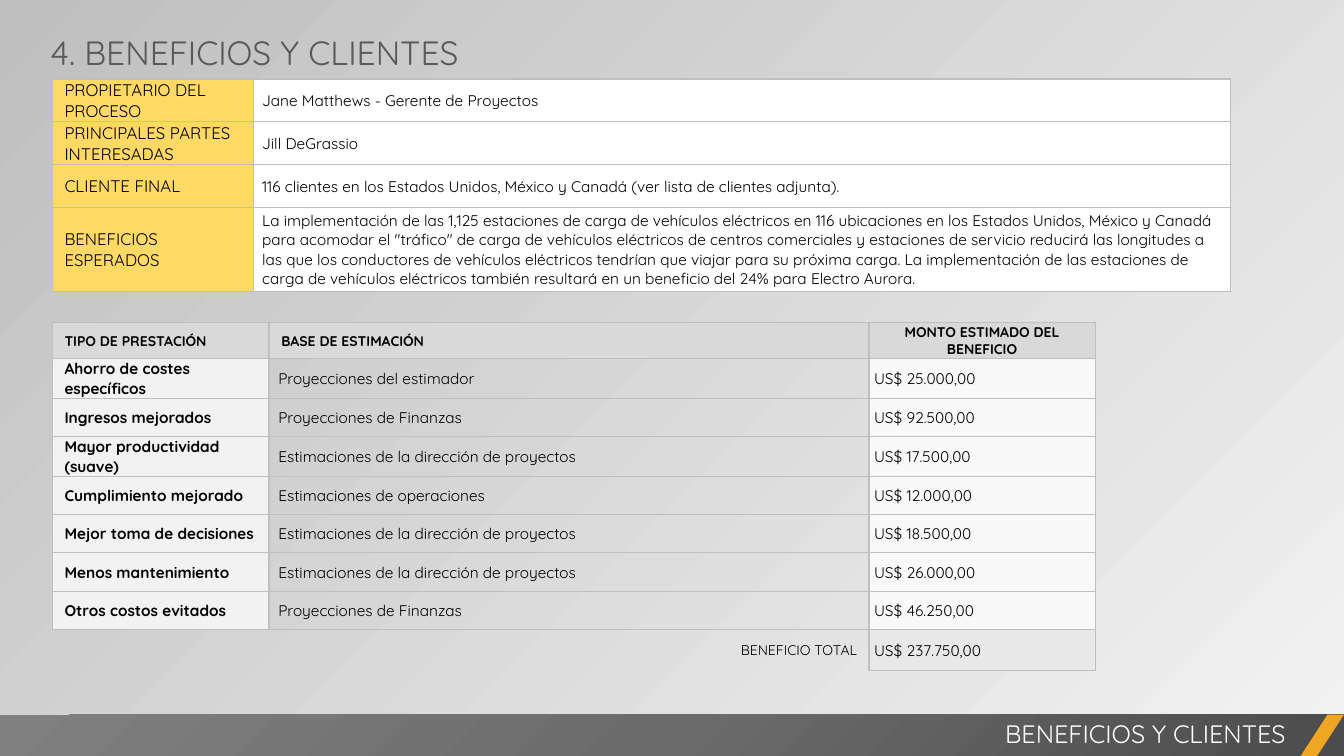
from lxml import etree
from pptx import Presentation
from pptx.dml.color import RGBColor
from pptx.enum.shapes import MSO_SHAPE as Shape
from pptx.enum.text import MSO_ANCHOR as Anchor, MSO_AUTO_SIZE as Fit, PP_ALIGN as Align
from pptx.oxml import parse_xml
from pptx.oxml.ns import nsdecls, qn
from pptx.util import Inches, Pt

TITLE = "4. BENEFICIOS Y CLIENTES"
FOOTER = "BENEFICIOS Y CLIENTES"
FACTS = [
    ("PROPIETARIO DEL PROCESO", "Jane Matthews - Gerente de Proyectos"),
    ("PRINCIPALES PARTES INTERESADAS", "Jill DeGrassio"),
    ("CLIENTE FINAL", "116 clientes en los Estados Unidos, México y Canadá "
     "(ver lista de clientes adjunta)."),
    ("BENEFICIOS ESPERADOS", "La implementación de las 1,125 estaciones de carga de "
     "vehículos eléctricos en 116 ubicaciones en los Estados Unidos, México y Canadá para "
     "acomodar el \"tráfico\" de carga de vehículos eléctricos de centros comerciales y "
     "estaciones de servicio reducirá las longitudes a las que los conductores de vehículos "
     "eléctricos tendrían que viajar para su próxima carga. La implementación de las "
     "estaciones de carga de vehículos eléctricos también resultará en un beneficio del "
     "24% para Electro Aurora."),
]
HEADS = ("TIPO DE PRESTACIÓN", "BASE DE ESTIMACIÓN", "MONTO ESTIMADO DEL BENEFICIO")
GAINS = [
    ("Ahorro de costes específicos", "Proyecciones del estimador", "US$ 25.000,00"),
    ("Ingresos mejorados", "Proyecciones de Finanzas", "US$ 92.500,00"),
    ("Mayor productividad (suave)", "Estimaciones de la dirección de proyectos", "US$ 17.500,00"),
    ("Cumplimiento mejorado", "Estimaciones de operaciones", "US$ 12.000,00"),
    ("Mejor toma de decisiones", "Estimaciones de la dirección de proyectos", "US$ 18.500,00"),
    ("Menos mantenimiento", "Estimaciones de la dirección de proyectos", "US$ 26.000,00"),
    ("Otros costos evitados", "Proyecciones de Finanzas", "US$ 46.250,00"),
]
TOTAL = ("BENEFICIO TOTAL", "US$ 237.750,00")

FONT = "Quicksand"
BLACK = RGBColor(0x00, 0x00, 0x00)
WHITE = RGBColor(0xFF, 0xFF, 0xFF)
GRAY = RGBColor(0x59, 0x59, 0x59)
RULE = RGBColor(0xBF, 0xBF, 0xBF)
PALE = RGBColor(0xF2, 0xF2, 0xF2)
HEAD = RGBColor(0xD9, 0xD9, 0xD9)
MONEY = RGBColor(0xF9, 0xF9, 0xF9)
SUM = RGBColor(0xE8, 0xE8, 0xE8)
YELLOW = RGBColor(0xFF, 0xD9, 0x66)
ORANGE = RGBColor(0xF0, 0xA6, 0x22)
BAND = ((0, RGBColor(0x4C, 0x4C, 0x4C)), (50, RGBColor(0x6B, 0x6B, 0x6B)),
        (100, RGBColor(0x80, 0x80, 0x80)))
NO_STYLE = "{2D5ABB26-0587-4C30-8999-92F81FD0307C}"


def write(frame, text, size, color=BLACK, bold=False, align=Align.LEFT):
    para = frame.paragraphs[0]
    para.alignment = align
    run = para.add_run()
    run.text = text
    font = run.font
    font.name, font.size, font.bold = FONT, Pt(size), bold
    font.color.rgb = color


def add_box(kind, left, top, width, height):
    box = slide.shapes.add_shape(kind, Inches(left), Inches(top), Inches(width), Inches(height))
    box.shadow.inherit = False
    box.line.fill.background()
    return box


def add_grid(top, cols, rows):
    """Add a table without style, with the given column widths and row heights."""
    frame = slide.shapes.add_table(len(rows), len(cols), Inches(0.52), Inches(top),
                                   Inches(sum(cols)), Inches(sum(rows)))
    grid = frame.table
    grid.first_row = grid.horz_banding = False
    next(frame._element.iter(qn("a:tableStyleId"))).text = NO_STYLE
    for col, width in zip(grid.columns, cols):
        col.width = Inches(width)
    for row, height in zip(grid.rows, rows):
        row.height = Inches(height)
    return grid


def put(cell, text, size, fill, edges, pad=0.12, end=0.01, **style):
    """Fill a cell; edges are the left, right, top and bottom line widths in points."""
    props = cell._tc.get_or_add_tcPr()
    for side, width in zip("LRTB", edges):
        if width:
            line = etree.SubElement(props, qn("a:ln" + side), w=str(Pt(width)))
            solid = etree.SubElement(line, qn("a:solidFill"))
            etree.SubElement(solid, qn("a:srgbClr"), val=str(RULE))
    if fill is None:
        cell.fill.background()
    else:
        cell.fill.solid()
        cell.fill.fore_color.rgb = fill
    cell.vertical_anchor = Anchor.MIDDLE
    cell.margin_left, cell.margin_right = Inches(pad), Inches(end)
    cell.margin_top, cell.margin_bottom = Inches(0.01), 0
    write(cell.text_frame, text, size, **style)


def add_facts():
    grid = add_grid(0.78, (1.99, 9.69), (0.42, 0.42, 0.42, 0.84))
    for i, (label, fact) in enumerate(FACTS):
        edges = (0.5, 0.5, 0.5 if i else 1.5, 0.5)
        put(grid.cell(i, 0), label, 12, YELLOW, edges)
        put(grid.cell(i, 1), fact, 11, WHITE, edges, pad=0.09)


def add_gains():
    grid = add_grid(3.2, (2.15, 2.15, 1.49, 2.31, 2.24), [0.35] + [0.38] * 8)
    last = len(GAINS)
    sides = ((0.5, 2), (2, 2), (2, 0.5))
    for i, texts in enumerate([HEADS] + GAINS):
        grid.cell(i, 1).merge(grid.cell(i, 3))
        kind, base, money = (grid.cell(i, col) for col in (0, 1, 4))
        ends = (0.5 if i else 1.5, 1 if i == last else 0.5)
        edges = [side + ends for side in sides]
        if i == 0:
            put(kind, texts[0], 10, HEAD, edges[0], bold=True)
            put(base, texts[1], 10, HEAD, edges[1], bold=True)
            put(money, texts[2], 10, HEAD, edges[2], pad=0.01, bold=True, align=Align.CENTER)
        else:
            put(kind, texts[0], 11, PALE, edges[0], bold=True)
            put(base, texts[1], 11, None, edges[1], pad=0.09)
            put(money, texts[2], 11, MONEY, edges[2], pad=0.05)
    put(grid.cell(last + 1, 3), TOTAL[0], 10, None, (0, 2, 1, 0), end=0.12, align=Align.RIGHT)
    put(grid.cell(last + 1, 4), TOTAL[1], 11, SUM, (2, 0.5, 1, 1), pad=0.05)


def add_footer():
    band = add_box(Shape.RECTANGLE, 0, 7.09, 13.33, 0.41)
    band.fill.gradient()
    stops = "".join(f'<a:gs pos="{pos * 1000}"><a:srgbClr val="{color}"/></a:gs>'
                    for pos, color in BAND)
    radial = parse_xml(
        f'<a:gradFill {nsdecls("a")} rotWithShape="1"><a:gsLst>{stops}</a:gsLst>'
        '<a:path path="circle"><a:fillToRect l="100000" t="100000"/></a:path></a:gradFill>')
    props = band._element.spPr
    props.replace(props.find(qn("a:gradFill")), radial)
    slash = add_box(Shape.PARALLELOGRAM, 12.9, 7.09, 0.43, 0.41)
    slash.adjustments[0] = 0.65
    slash.fill.solid()
    slash.fill.fore_color.rgb = ORANGE
    label = slide.shapes.add_textbox(Inches(5.25), Inches(7.08), Inches(7.6), Inches(0.4))
    label.text_frame.word_wrap = True
    write(label.text_frame, FOOTER, 18, WHITE, align=Align.RIGHT)


deck = Presentation()
deck.slide_width, deck.slide_height = Inches(13.33), Inches(7.5)
slide = deck.slides.add_slide(deck.slide_layouts[5])
back = slide.background.fill
back.gradient()
back.gradient_angle = 135
for stop, color in zip(back.gradient_stops, (PALE, RULE)):
    stop.color.rgb = color

title = slide.shapes.title
title.left, title.top = Inches(0.4), Inches(0.27)
title.width, title.height = Inches(4.33), Inches(0.5)
frame = title.text_frame
frame.word_wrap, frame.auto_size, frame.vertical_anchor = False, Fit.NONE, Anchor.TOP
write(frame, TITLE, 24, GRAY)

add_facts()
add_gains()
add_footer()
deck.save("out.pptx")
